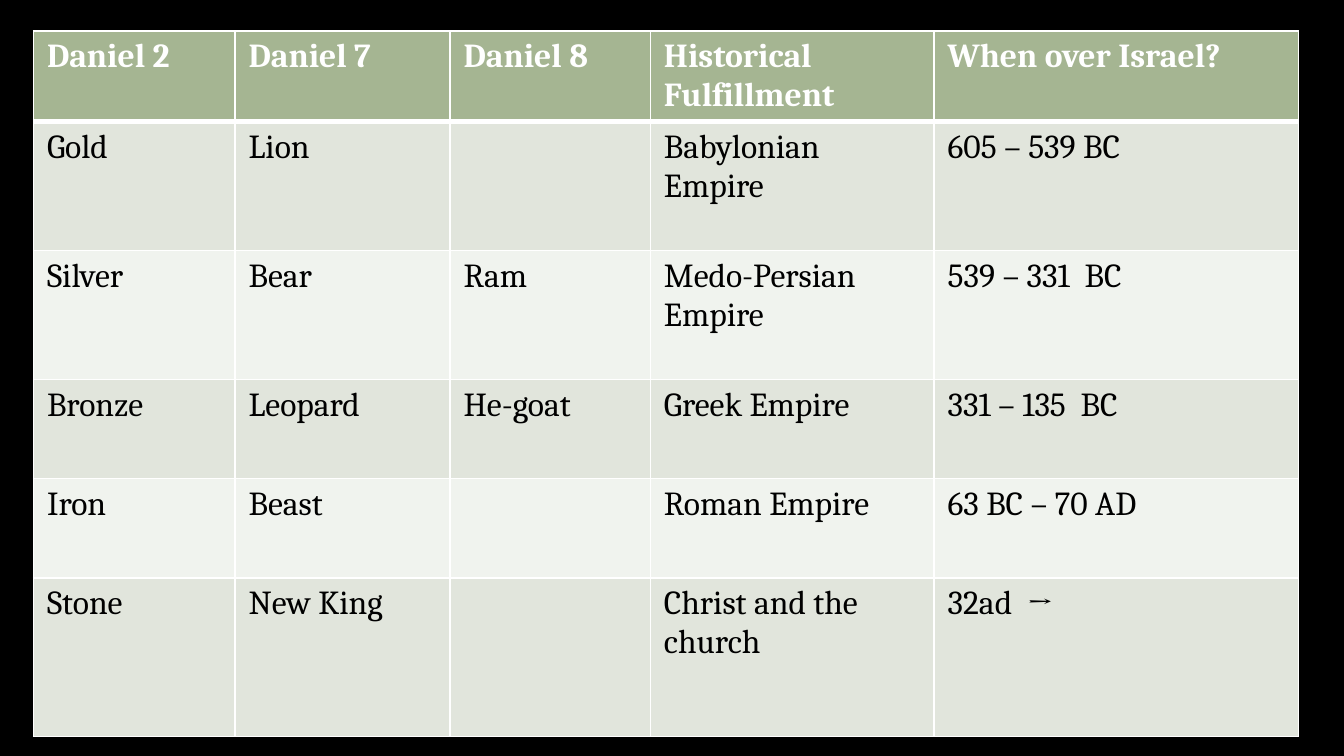
from lxml import etree
from pptx import Presentation
from pptx.dml.color import RGBColor
from pptx.oxml.ns import qn
from pptx.util import Pt

BLACK = RGBColor(0x00, 0x00, 0x00)
WHITE = RGBColor(0xFF, 0xFF, 0xFF)
HEADER_GREEN = RGBColor(0xA5, 0xB5, 0x92)
BAND_DARK = RGBColor(0xE1, 0xE5, 0xDC)
BAND_LIGHT = RGBColor(0xF0, 0xF3, 0xEE)

FONT_NAME = "Cambria"
FONT_SIZE = Pt(18)
THIN, THICK = Pt(1), Pt(3)

TABLE_BOX = (Pt(18), Pt(16.5), Pt(678), Pt(379.5))
COLUMN_WIDTHS = (108, 115.2, 107.3, 152, 195.1)
ROW_HEIGHTS = (37.5, 69, 69, 53.2, 53.2, 85)
KINGDOMS = (
    ("Daniel 2", "Daniel 7", "Daniel 8", "Historical Fulfillment", "When over Israel?"),
    ("Gold", "Lion", "", "Babylonian Empire", "605 – 539 BC"),
    ("Silver", "Bear", "Ram", "Medo-Persian Empire", "539 – 331  BC"),
    ("Bronze", "Leopard", "He-goat", "Greek Empire", "331 – 135  BC"),
    ("Iron", "Beast", "", "Roman Empire", "63 BC – 70 AD"),
    ("Stone", "New King", "", "Christ and the church", "32ad  →"),
)


def set_borders(cell, top, bottom):
    """Give the cell white borders with the given top and bottom widths."""
    properties = cell._tc.get_or_add_tcPr()
    for side, width in (("L", THIN), ("R", THIN), ("T", top), ("B", bottom)):
        line = etree.SubElement(properties, qn(f"a:ln{side}"), w=str(width))
        fill = etree.SubElement(line, qn("a:solidFill"))
        etree.SubElement(fill, qn("a:srgbClr"), val=str(WHITE))


def fill_cell(cell, text, row_index):
    """Style one cell by its row and write its text."""
    is_header = row_index == 0
    set_borders(
        cell,
        top=THICK if row_index == 1 else THIN,
        bottom=THICK if is_header else THIN,
    )
    band = BAND_DARK if row_index % 2 else BAND_LIGHT
    cell.fill.solid()
    cell.fill.fore_color.rgb = HEADER_GREEN if is_header else band
    paragraph = cell.text_frame.paragraphs[0]
    paragraph.font.size = FONT_SIZE
    if text:
        run = paragraph.add_run()
        run.text = text
        run.font.name = FONT_NAME
        run.font.size = FONT_SIZE
        run.font.bold = is_header
        run.font.color.rgb = WHITE if is_header else BLACK


def add_kingdom_table(slide, left, top, width, height):
    """Place the table of kingdoms in the given box."""
    shape = slide.shapes.add_table(
        len(ROW_HEIGHTS), len(COLUMN_WIDTHS), left, top, width, height
    )
    table = shape.table
    for column, column_width in zip(table.columns, COLUMN_WIDTHS):
        column.width = Pt(column_width)
    for row_index, (row, row_height) in enumerate(zip(table.rows, ROW_HEIGHTS)):
        row.height = Pt(row_height)
        for cell, text in zip(row.cells, KINGDOMS[row_index]):
            fill_cell(cell, text, row_index)
    shape.height = height


def main():
    """Build the slide and save the presentation."""
    presentation = Presentation()
    presentation.slide_width = Pt(720)
    presentation.slide_height = Pt(405)
    slide = presentation.slides.add_slide(presentation.slide_layouts[6])
    slide.background.fill.solid()
    slide.background.fill.fore_color.rgb = BLACK
    add_kingdom_table(slide, *TABLE_BOX)
    presentation.save("out.pptx")


if __name__ == "__main__":
    main()
